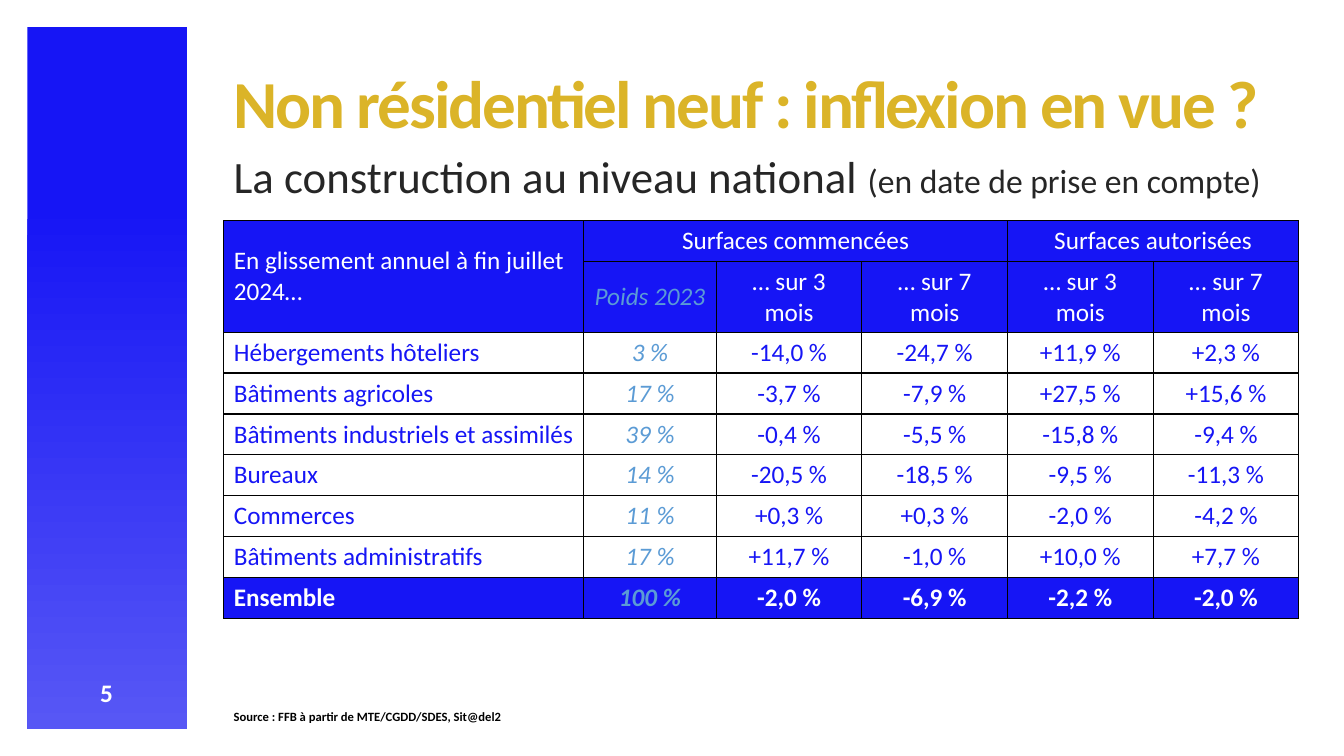
from pptx import Presentation
from pptx.dml.color import RGBColor
from pptx.enum.shapes import MSO_SHAPE
from pptx.enum.text import MSO_ANCHOR, PP_ALIGN
from pptx.oxml import parse_xml
from pptx.oxml.ns import nsdecls
from pptx.util import Cm, Pt

BLUE = RGBColor(0x16, 0x15, 0xF5)
LIGHT_BLUE = RGBColor(0x57, 0x57, 0xF5)
SKY = RGBColor(0x5B, 0x9B, 0xD5)
GOLD = RGBColor(0xDB, 0xB4, 0x28)
DARK = RGBColor(0x26, 0x26, 0x26)
BLACK = RGBColor(0, 0, 0)
WHITE = RGBColor(0xFF, 0xFF, 0xFF)


def write(para, text, size=18, color=WHITE, bold=False, italic=False, spacing=None):
    span = para.add_run()
    span.text = text
    font = span.font
    font.name, font.size = "Calibri", Pt(size)
    font.bold, font.italic = bold, italic
    font.color.rgb = color
    if spacing is not None:
        span._r.get_or_add_rPr().set("spc", str(spacing))


def add_line(page, left, top, width, height):
    box = page.shapes.add_textbox(Cm(left), Cm(top), Cm(width), Cm(height))
    box.text_frame.word_wrap = True
    return box.text_frame.paragraphs[0]


deck = Presentation()
deck.slide_width, deck.slide_height = Cm(33.87), Cm(19.05)
page = deck.slides.add_slide(deck.slide_layouts[6])

# Side band with the page number
band = page.shapes.add_shape(MSO_SHAPE.RECTANGLE, Cm(0.69), Cm(0.69), Cm(4.03), Cm(17.68))
band.shadow.inherit = False
band.line.fill.background()
band.fill.gradient()
band.fill.gradient_angle = 270
for stop, position, color in zip(band.fill.gradient_stops, (0.25, 1), (BLUE, LIGHT_BLUE)):
    stop.position = position
    stop.color.rgb = color

number = add_line(page, 0.69, 16.94, 3.99, 1.02)
number.alignment = PP_ALIGN.CENTER
write(number, "5", bold=True)

# Title, subtitle and source
LEFT, WIDTH = 5.64, 27.08
title = add_line(page, LEFT, 1.65, WIDTH, 2.11)
write(title, "Non résidentiel neuf : inflexion en vue ?", 48, GOLD, bold=True, spacing=-150)
subtitle = add_line(page, LEFT, 3.78, WIDTH, 1.27)
write(subtitle, "La construction au niveau national ", 32, DARK)
write(subtitle, "(en date de prise en compte)", 24, DARK)
source = add_line(page, LEFT, 17.78, 22.81, 0.61)
write(source, "Source : FFB à partir de MTE/CGDD/SDES, Sit@del2", 9, BLACK, bold=True)
for para in (title, subtitle, source):
    para.line_spacing = 0.9

# Table of yearly changes
rows = [
    ("En glissement annuel à fin juillet 2024…", "Surfaces commencées", "", "",
     "Surfaces autorisées", ""),
    ("", "Poids 2023", "… sur 3 mois", "… sur 7 mois", "… sur 3 mois", "… sur 7 mois"),
    ("Hébergements hôteliers", "3 %", "-14,0 %", "-24,7 %", "+11,9 %", "+2,3 %"),
    ("Bâtiments agricoles", "17 %", "-3,7 %", "-7,9 %", "+27,5 %", "+15,6 %"),
    ("Bâtiments industriels et assimilés", "39 %", "-0,4 %", "-5,5 %", "-15,8 %", "-9,4 %"),
    ("Bureaux", "14 %", "-20,5 %", "-18,5 %", "-9,5 %", "-11,3 %"),
    ("Commerces", "11 %", "+0,3 %", "+0,3 %", "-2,0 %", "-4,2 %"),
    ("Bâtiments administratifs", "17 %", "+11,7 %", "-1,0 %", "+10,0 %", "+7,7 %"),
    ("Ensemble", "100 %", "-2,0 %", "-6,9 %", "-2,2 %", "-2,0 %"),
]
column_widths = [9.07, 3.34] + [3.67] * 4
row_heights = [1.03, 1.78] + [1.03] * 7
table = page.shapes.add_table(len(rows), len(column_widths), Cm(LEFT), Cm(5.56),
                              Cm(sum(column_widths)), Cm(sum(row_heights))).table
table.first_row = table.horz_banding = False
for column, width in zip(table.columns, column_widths):
    column.width = Cm(width)
for row, height in zip(table.rows, row_heights):
    row.height = Cm(height)

total_row = len(rows) - 1
for r, texts in enumerate(rows):
    on_blue = r < 2 or r == total_row
    for c, text in enumerate(texts):
        cell = table.cell(r, c)
        cell.vertical_anchor = MSO_ANCHOR.MIDDLE
        for side in ("lnL", "lnR", "lnT", "lnB"):
            cell._tc.get_or_add_tcPr().append(parse_xml(
                f'<a:{side} {nsdecls("a")} w="12700"><a:solidFill>'
                f'<a:srgbClr val="{BLACK}"/></a:solidFill></a:{side}>'))
        cell.fill.solid()
        cell.fill.fore_color.rgb = BLUE if on_blue else WHITE
        if not text:
            continue
        para = cell.text_frame.paragraphs[0]
        para.alignment = PP_ALIGN.CENTER if c else PP_ALIGN.LEFT
        is_weight = c == 1 and r > 0
        color = SKY if is_weight else WHITE if on_blue else BLUE
        write(para, text, color=color, bold=r == total_row, italic=is_weight)

# Merged headings
table.cell(0, 0).merge(table.cell(1, 0))
table.cell(0, 1).merge(table.cell(0, 3))
table.cell(0, 4).merge(table.cell(0, 5))

deck.save("out.pptx")
